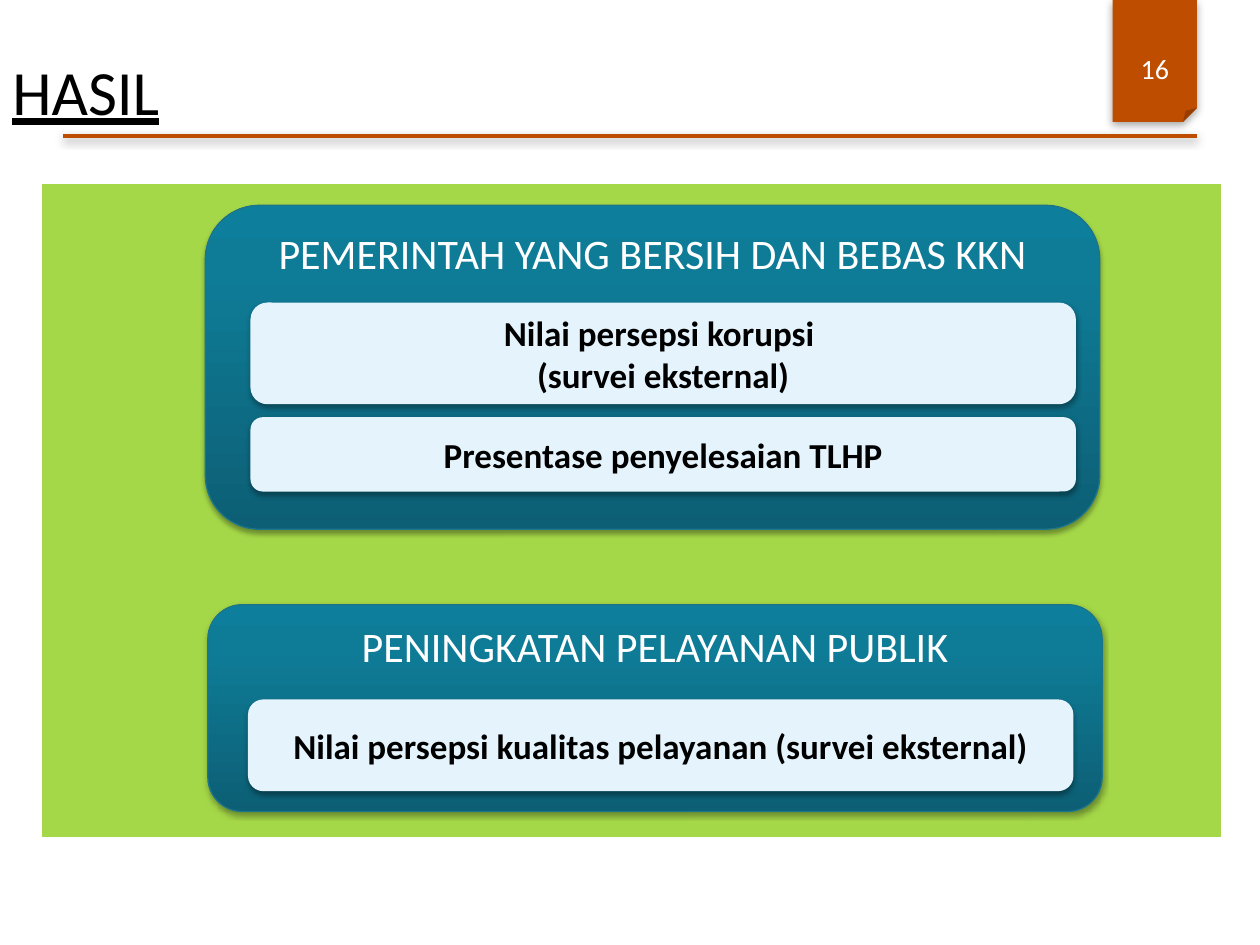
import pptx
import pptx.util
import pptx.dml.color
import pptx.enum.shapes
import pptx.enum.text
import pptx.oxml
import pptx.oxml.ns

Cm, Pt = pptx.util.Cm, pptx.util.Pt
MSO = pptx.enum.shapes.MSO_SHAPE
ALIGN = pptx.enum.text.PP_ALIGN
ANCHOR = pptx.enum.text.MSO_ANCHOR
rgb = pptx.dml.color.RGBColor.from_string
NS = pptx.oxml.ns.nsdecls("a")

ORANGE = "BF4D00"
GRADIENT = [(0, "0C5F75"), (80, "0F7C97"), (100, "0D7E9B")]


def add_shadow(s, blur, dist=1.8, alpha=35):
    spPr = s._element.spPr
    for old in spPr.findall(pptx.oxml.ns.qn("a:effectLst")):
        spPr.remove(old)
    spPr.append(pptx.oxml.parse_xml(
        f'<a:effectLst {NS}><a:outerShdw blurRad="{int(Pt(blur))}" dist="{int(Pt(dist))}" '
        f'dir="5400000" rotWithShape="0"><a:srgbClr val="000000">'
        f'<a:alpha val="{alpha * 1000}"/></a:srgbClr></a:outerShdw></a:effectLst>'))


def write(s, lines, size, color, align=ALIGN.CENTER, anchor=ANCHOR.MIDDLE, bold=False):
    tf = s.text_frame
    tf.word_wrap = True
    tf.vertical_anchor = anchor
    tf.text = "\n".join(lines)
    for p in tf.paragraphs:
        p.alignment = align
        p.font.name = "Calibri"
        p.font.size = Pt(size)
        p.font.bold = bold
        p.font.color.rgb = rgb(color)


prs = pptx.Presentation()
prs.slide_width, prs.slide_height = Cm(25.4), Cm(19.05)
slide = prs.slides.add_slide(prs.slide_layouts[6])
shapes = slide.shapes

# Page tab and header rule
s = shapes.add_shape(MSO.FOLDED_CORNER, Cm(22.43), 0, Cm(1.7), Cm(2.46))
s.fill.solid()
s.fill.fore_color.rgb = rgb(ORANGE)
s.line.fill.background()
add_shadow(s, 5)

s = shapes.add_connector(pptx.enum.shapes.MSO_CONNECTOR.STRAIGHT,
                         Cm(1.27), Cm(2.74), Cm(24.13), Cm(2.74))
s.line.color.rgb = rgb(ORANGE)
s.line.width = Pt(2)
add_shadow(s, 5, 1.6, 38)

# Title and page number
s = shapes.add_textbox(0, Cm(0.76), Cm(24.13), Cm(2.11))
write(s, ["HASIL"], 36, "000000", ALIGN.LEFT)
s.text_frame.paragraphs[0].font.underline = True

s = shapes.add_textbox(Cm(22.43), Cm(0.84), Cm(1.7), Cm(1.07))
write(s, ["16"], 16, "FFFFFF")

# Green panel
s = shapes.add_shape(MSO.RECTANGLE, Cm(0.81), Cm(3.68), Cm(23.85), Cm(13.23))
s.shadow.inherit = False
s.fill.solid()
s.fill.fore_color.rgb = rgb("A5D848")
s.line.color.rgb = rgb("FFFFFF")
s.line.width = Pt(2)

# Result cards: left, top, height, heading
cards = [
    (4.14, 4.14, 6.53, "PEMERINTAH YANG BERSIH DAN BEBAS KKN"),
    (4.19, 12.19, 4.17, "PENINGKATAN PELAYANAN PUBLIK"),
]
for left, top, height, heading in cards:
    s = shapes.add_shape(MSO.ROUNDED_RECTANGLE, Cm(left), Cm(top), Cm(18.03), Cm(height))
    s.fill.gradient()
    s.fill.gradient_angle = 90
    stops = s._element.spPr.find(".//" + pptx.oxml.ns.qn("a:gsLst"))
    for old in list(stops):
        stops.remove(old)
    for pos, color in GRADIENT:
        stops.append(pptx.oxml.parse_xml(
            f'<a:gs {NS} pos="{pos * 1000}"><a:srgbClr val="{color}"/></a:gs>'))
    s.line.color.rgb = rgb("1D758C")
    s.line.width = Pt(0.75)
    add_shadow(s, 3.1)
    write(s, [heading], 24, "FFFFFF", anchor=ANCHOR.TOP)

# Indicators: left, top, height, lines (the first is tall enough for two lines)
indicators = [
    (5.05, 6.1, 2.05, ["Nilai persepsi korupsi ", "(survei eksternal)"]),
    (5.05, 8.41, 1.5, ["Presentase penyelesaian TLHP"]),
    (5.0, 14.1, 1.85, ["Nilai persepsi kualitas pelayanan (survei eksternal)"]),
]
for left, top, height, lines in indicators:
    s = shapes.add_shape(MSO.ROUNDED_RECTANGLE, Cm(left), Cm(top), Cm(16.64), Cm(height))
    s.fill.solid()
    s.fill.fore_color.rgb = rgb("E4F3FC")
    s.line.fill.background()
    add_shadow(s, 3.1)
    write(s, lines, 20, "000000", bold=True)
    s.text_frame.margin_top = s.text_frame.margin_bottom = Cm(0.1)

prs.save("out.pptx")
